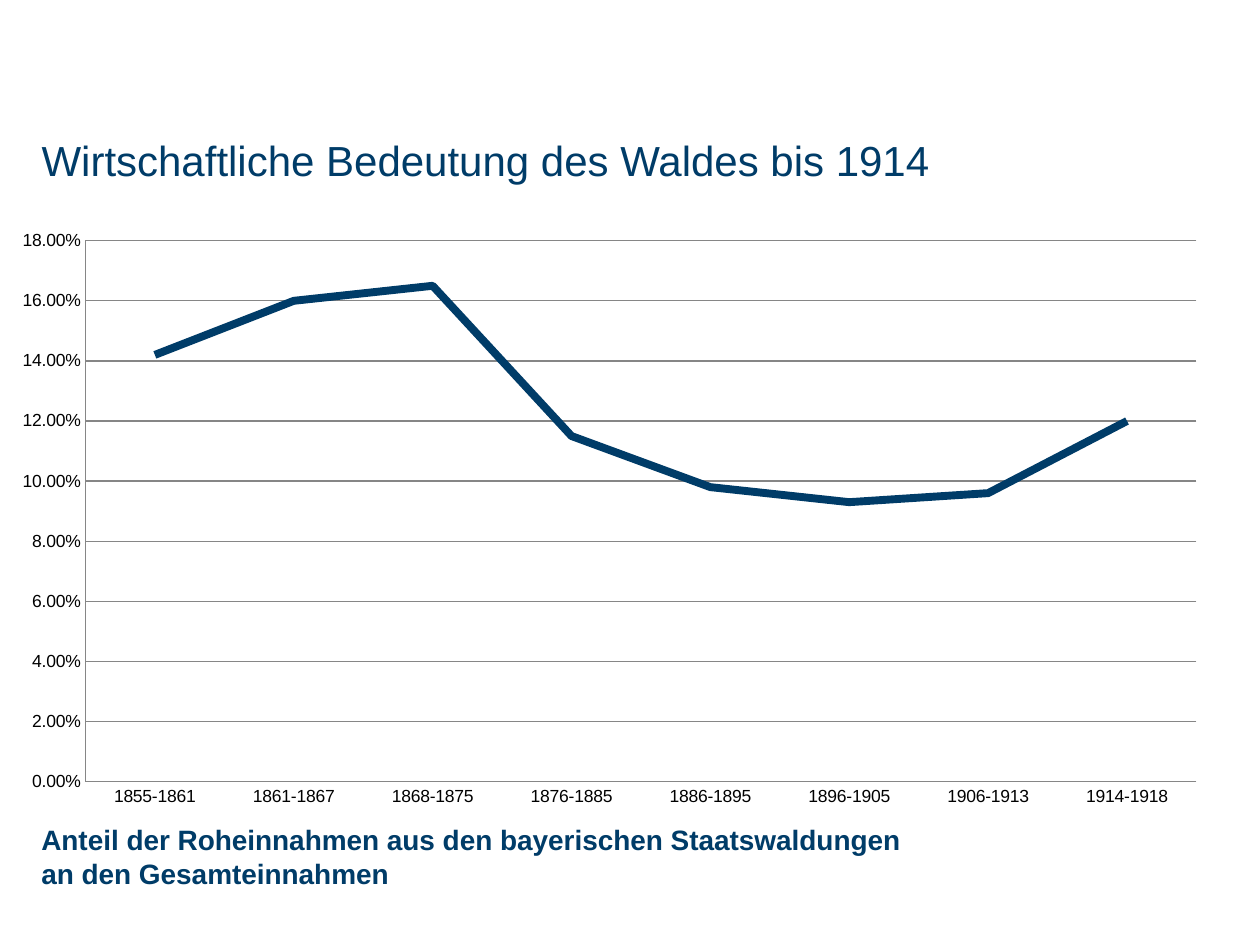
"""Build a slide with a line chart of the forest's share of state revenue."""
from lxml import etree
from pptx import Presentation
from pptx.chart.data import CategoryChartData
from pptx.dml.color import RGBColor
from pptx.enum import chart as ch, text
from pptx.oxml.ns import qn
from pptx.util import Inches, Pt

NAVY = RGBColor(0x00, 0x3C, 0x68)
BLACK = RGBColor(0x00, 0x00, 0x00)
GREY = RGBColor(0x86, 0x86, 0x86)
FONT = "Arial"

TITLE = "Wirtschaftliche Bedeutung des Waldes bis 1914"
CAPTION = ("Anteil der Roheinnahmen aus den bayerischen Staatswaldungen an "
           "den Gesamteinnahmen")
REVENUE_SHARE = {
    "1855-1861": 0.142,
    "1861-1867": 0.16,
    "1868-1875": 0.165,
    "1876-1885": 0.115,
    "1886-1895": 0.098,
    "1896-1905": 0.093,
    "1906-1913": 0.096,
    "1914-1918": 0.12,
}
PLOT_LAYOUT = {"layoutTarget": "inner", "xMode": "edge", "yMode": "edge",
               "x": 0.07, "y": 0.04, "w": 0.91, "h": 0.9}


def place(shape, left, top, width, height):
    shape.left, shape.top = Inches(left), Inches(top)
    shape.width, shape.height = Inches(width), Inches(height)


def write(shape, words, size, bold, anchor):
    frame = shape.text_frame
    frame.word_wrap = True
    frame.vertical_anchor = anchor
    para = frame.paragraphs[0]
    para.alignment = text.PP_ALIGN.LEFT
    span = para.add_run()
    span.text = words
    span.font.name, span.font.size, span.font.bold = FONT, Pt(size), bold
    span.font.color.rgb = NAVY


def fix_plot_area(chart):
    plot_area = chart._chartSpace.chart.plotArea
    for old in plot_area.findall(qn("c:layout")):
        plot_area.remove(old)
    layout = etree.Element(qn("c:layout"))
    manual = etree.SubElement(layout, qn("c:manualLayout"))
    for name, value in PLOT_LAYOUT.items():
        etree.SubElement(manual, qn(f"c:{name}")).set("val", str(value))
    plot_area.insert(0, layout)


def add_revenue_chart(slide):
    data = CategoryChartData(number_format="0.00%")
    data.categories = list(REVENUE_SHARE)
    data.add_series("Series 1", list(REVENUE_SHARE.values()))
    chart = slide.shapes.add_chart(
        ch.XL_CHART_TYPE.LINE_STACKED, Inches(0), Inches(1.72),
        Inches(9.69), Inches(4.77), data).chart
    chart.has_legend = chart.has_title = False
    chart.font.name, chart.font.size = FONT, Pt(10)
    chart.font.color.rgb = BLACK
    chart.plots[0].vary_by_categories = False

    series = chart.plots[0].series[0]
    series.smooth = False
    series.marker.style = ch.XL_MARKER_STYLE.NONE
    series.format.line.color.rgb = NAVY
    series.format.line.width = Pt(4.5)

    for axis in (chart.category_axis, chart.value_axis):
        axis.major_tick_mark = axis.minor_tick_mark = ch.XL_TICK_MARK.NONE
        axis.format.line.color.rgb = GREY
    values = chart.value_axis
    values.minimum_scale, values.maximum_scale, values.major_unit = 0, 0.18, 0.02
    values.tick_labels.number_format = "0.00%"
    values.tick_labels.number_format_is_linked = False
    values.has_major_gridlines = True
    values.major_gridlines.format.line.color.rgb = GREY
    fix_plot_area(chart)


def main():
    deck = Presentation()
    deck.slide_width, deck.slide_height = Inches(10), Inches(7.5)
    slide = deck.slides.add_slide(deck.slide_layouts[5])

    title = slide.shapes.title
    place(title, 0.23, 1.02, 8.5, 0.5)
    write(title, TITLE, 24, False, text.MSO_ANCHOR.MIDDLE)

    add_revenue_chart(slide)

    caption = slide.shapes.add_textbox(
        Inches(0.23), Inches(6.48), Inches(7.34), Inches(0.64))
    write(caption, CAPTION, 16, True, text.MSO_ANCHOR.TOP)
    caption.text_frame.auto_size = text.MSO_AUTO_SIZE.SHAPE_TO_FIT_TEXT

    deck.save("out.pptx")


if __name__ == "__main__":
    main()
